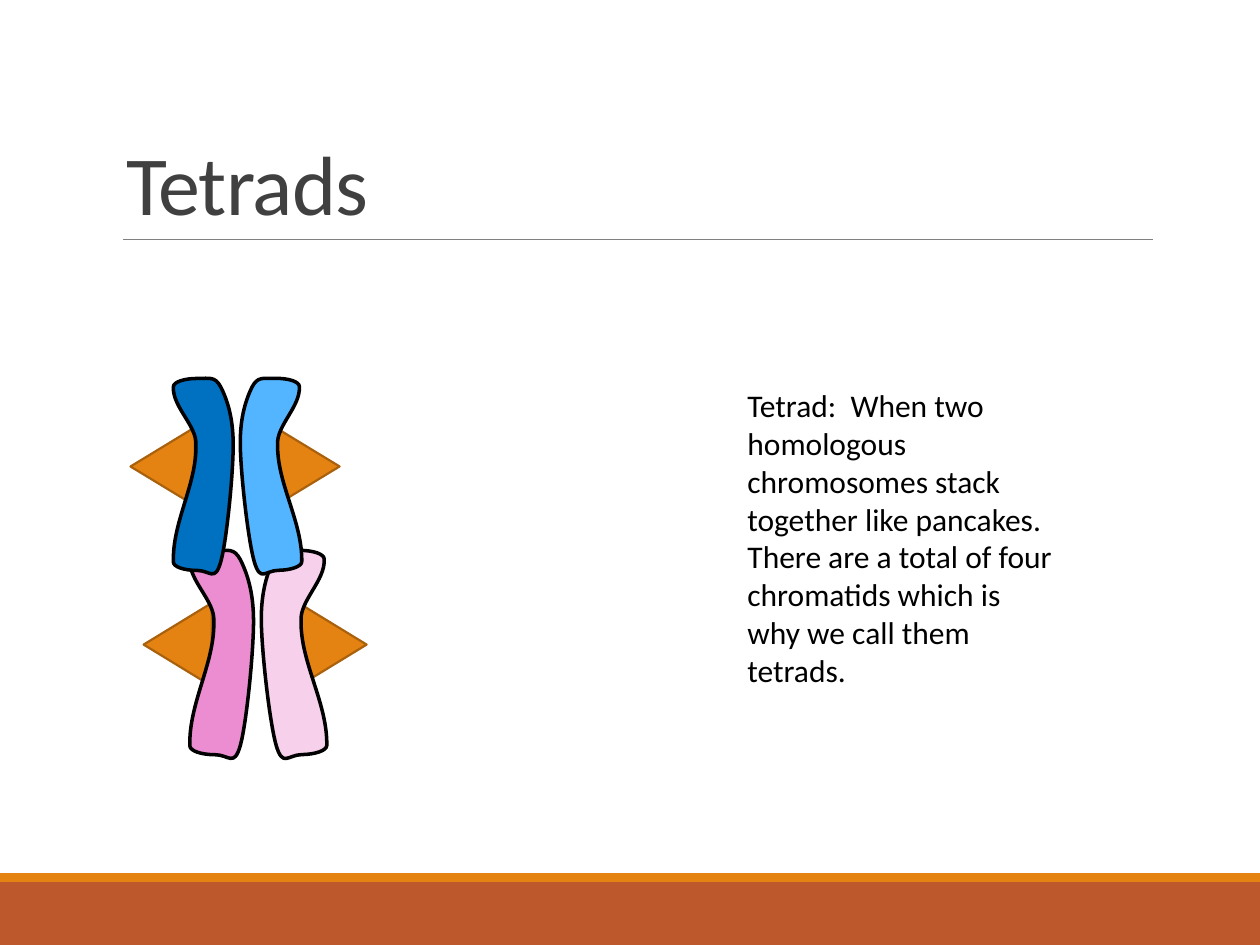
from dataclasses import dataclass

from lxml import etree
from pptx import Presentation
from pptx.dml.color import RGBColor
from pptx.enum.shapes import MSO_CONNECTOR, MSO_SHAPE
from pptx.enum.text import MSO_ANCHOR, MSO_AUTO_SIZE, PP_ALIGN
from pptx.oxml.ns import qn
from pptx.util import Pt

RECTANGLE = MSO_SHAPE.RECTANGLE
TRIANGLE = MSO_SHAPE.ISOSCELES_TRIANGLE
STRAIGHT = MSO_CONNECTOR.STRAIGHT
BOTTOM = MSO_ANCHOR.BOTTOM
LEFT = PP_ALIGN.LEFT
NO_AUTOFIT = MSO_AUTO_SIZE.NONE
GROW = MSO_AUTO_SIZE.SHAPE_TO_FIT_TEXT


@dataclass(frozen=True)
class Theme:
    font: str = "Calibri"
    title_size: float = 48
    body_size: float = 18
    title: str = "404040"
    body: str = "000000"
    rule: str = "808080"
    band: str = "BD582C"
    accent: str = "E48312"
    accent_edge: str = "A9610D"
    outline: str = "000000"
    blue: str = "0070C0"
    light_blue: str = "53B5FF"
    pink: str = "EB8DD0"
    light_pink: str = "F7D1EC"


THEME = Theme()

# Left-hand chromatid in points: a start, then cubic curves (two controls, end).
CHROMATID_WIDTH, CHROMATID_HEIGHT = 36.5, 119.5
CHROMATID_START = (0, 5.8)
CHROMATID_CURVES = [
    ((0, 2.9), (6.5, 0.7), (14.4, 0.7)),
    ((22.3, 0.7), (25.2, -0.7), (28.8, 5.8)),
    ((32.4, 13), (36.4, 23.8), (36.4, 41)),
    ((36.4, 59), (32.4, 99.4), (28.8, 112.3)),
    ((25.2, 124.6), (22.3, 117.4), (14.4, 117.4)),
    ((6.5, 117.4), (0, 115.2), (0, 112.3)),
    ((-0.7, 87.8), (14.4, 64.8), (13.7, 41)),
    ((14.4, 29.5), (-0.7, 18), (0, 5.8)),
]
TILT = 359.2


def rgb(color):
    return RGBColor.from_string(color)


def paint(shape, fill, edge=None, weight=0):
    shape.shadow.inherit = False
    shape.fill.solid()
    shape.fill.fore_color.rgb = rgb(fill)
    if edge:
        shape.line.color.rgb = rgb(edge)
        shape.line.width = Pt(weight)
    else:
        shape.line.fill.background()


def place(shape, left, top, width, height):
    shape.left, shape.top = Pt(left), Pt(top)
    shape.width, shape.height = Pt(width), Pt(height)


def style_text(paragraph, size, color):
    for span in paragraph.runs:
        span.font.name = THEME.font
        span.font.size = Pt(size)
        span.font.color.rgb = rgb(color)


def add_band(page, top, height, color):
    band = page.shapes.add_shape(RECTANGLE, 0, Pt(top), Pt(720), Pt(height))
    paint(band, color)


def add_rule(page, left, right, y):
    rule = page.shapes.add_connector(STRAIGHT, Pt(left), Pt(y), Pt(right), Pt(y))
    rule.line.color.rgb = rgb(THEME.rule)
    rule.line.width = Pt(0.5)
    etree.SubElement(rule._element.spPr, qn("a:effectLst"))


def add_title(page, text):
    title = page.shapes.title
    place(title, 64.8, 22.3, 594, 114.5)
    frame = title.text_frame
    frame.text = text
    frame.auto_size = NO_AUTOFIT
    frame.vertical_anchor = BOTTOM
    paragraph = frame.paragraphs[0]
    paragraph.alignment = LEFT
    paragraph.line_spacing = 0.85
    style_text(paragraph, THEME.title_size, THEME.title)
    paragraph.runs[0].font._element.set("spc", "-50")


def add_definition(page, text):
    box = page.shapes.add_textbox(Pt(420), Pt(217.1), Pt(188.6), Pt(181.4))
    frame = box.text_frame
    frame.word_wrap = True
    frame.auto_size = GROW
    frame.text = text
    style_text(frame.paragraphs[0], THEME.body_size, THEME.body)


def curve_outline(shape, scale, mirrored):
    """Replace the straight segments of a freeform by the chromatid's curves."""
    outline = shape._element.spPr.find(".//" + qn("a:path"))
    for segment in list(outline):
        outline.remove(segment)
    steps = [("a:moveTo", [CHROMATID_START])]
    steps += [("a:cubicBezTo", curve) for curve in CHROMATID_CURVES]
    for tag, points in steps:
        step = etree.SubElement(outline, qn(tag))
        for x, y in points:
            across = CHROMATID_WIDTH - x if mirrored else x
            etree.SubElement(step, qn("a:pt"),
                             x=str(Pt(scale * across)), y=str(Pt(scale * y)))
    etree.SubElement(outline, qn("a:close"))


def add_chromatid(group, left, top, scale, color, mirrored=False):
    right = left + scale * CHROMATID_WIDTH
    bottom = top + scale * CHROMATID_HEIGHT
    builder = group.shapes.build_freeform(Pt(left), Pt(top))
    builder.add_line_segments(
        [(Pt(right), Pt(top)), (Pt(right), Pt(bottom)), (Pt(left), Pt(bottom))])
    chromatid = builder.convert_to_shape()
    curve_outline(chromatid, scale, mirrored)
    paint(chromatid, color, THEME.outline, 2)
    if mirrored:
        chromatid.rotation = TILT


def add_kinetochore(group, left, top, width, height, rotation):
    triangle = group.shapes.add_shape(
        TRIANGLE, Pt(left), Pt(top), Pt(width), Pt(height))
    triangle.rotation = rotation
    paint(triangle, THEME.accent, THEME.accent_edge, 1.25)


def add_chromosome(page, lefts, top, scale, triangles, colors):
    """Two mirrored chromatids over a pair of outward-pointing triangles."""
    group = page.shapes.add_group_shape()
    triangle_lefts, triangle_top, width, height = triangles
    for left, rotation in zip(triangle_lefts, (270, 90)):
        add_kinetochore(group, left, triangle_top, width, height, rotation)
    add_chromatid(group, lefts[1], top, scale, colors[1], mirrored=True)
    add_chromatid(group, lefts[0], top, scale, colors[0])


def main():
    deck = Presentation()
    deck.slide_width, deck.slide_height = Pt(720), Pt(540)
    page = deck.slides.add_slide(deck.slide_layouts[5])

    add_band(page, 504, 36, THEME.band)
    add_band(page, 499, 5, THEME.accent)
    add_rule(page, 70.5, 658.8, 136.8)
    add_title(page, "Tetrads")

    add_chromosome(page, (108.5, 149.5), 313.9, 1,
                   ((77.8, 166.3), 348.9, 47.5, 38.9),
                   (THEME.pink, THEME.light_pink))
    add_chromosome(page, (99.1, 137.5), 215.6, 0.94,
                   ((70.6, 153.4), 248.2, 44.6, 36.7),
                   (THEME.blue, THEME.light_blue))

    add_definition(page, "Tetrad:  When two homologous chromosomes stack together "
                         "like pancakes.  There are a total of four chromatids "
                         "which is why we call them tetrads.")
    deck.save("out.pptx")


if __name__ == "__main__":
    main()
